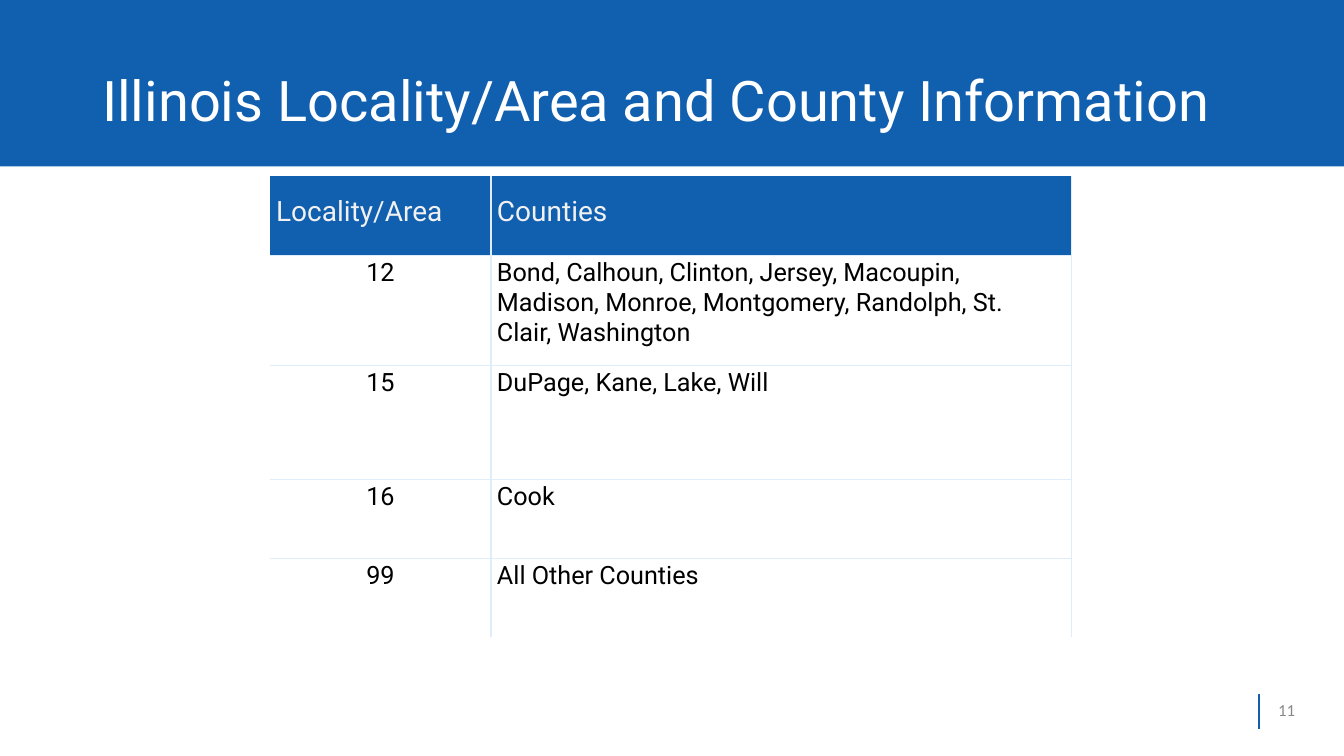
from lxml import etree
from pptx import Presentation
from pptx.dml.color import RGBColor
from pptx.enum.shapes import MSO_CONNECTOR, MSO_SHAPE
from pptx.enum.text import PP_ALIGN
from pptx.oxml.ns import qn
from pptx.util import Inches, Pt

SLIDE_W, SLIDE_H = Inches(13.33), Inches(7.5)
BLUE = RGBColor(0x11, 0x5F, 0xAF)
RULE_BLUE = RGBColor(0x12, 0x5F, 0xB0)
PALE_BLUE = RGBColor(0xDF, 0xEC, 0xF9)
WHITE = RGBColor(0xFF, 0xFF, 0xFF)
OFF_WHITE = RGBColor(0xF1, 0xF1, 0xF1)
BLACK = RGBColor(0, 0, 0)
GREY = RGBColor(0x88, 0x88, 0x88)

TITLE_FONT = {"name": "Roboto", "size": Pt(40)}
HEADER_FONT = {"name": "Roboto", "size": Pt(20)}
BODY_FONT = {"name": "Roboto", "size": Pt(18)}
PAGE_FONT = {"name": "Calibri", "size": Pt(12)}

COLUMN_SHARES = (16.43, 43.21)
ROW_SHARES = (10.5, 14.55, 15.08, 10.45, 10.45)
LOCALITIES = (
    ("Locality/Area", "Counties"),
    ("12", "Bond, Calhoun, Clinton, Jersey, Macoupin, Madison, Monroe, "
           "Montgomery, Randolph, St. Clair, Washington"),
    ("15", "DuPage, Kane, Lake, Will"),
    ("16", "Cook"),
    ("99", "All Other Counties"),
)


def across(percent):
    return round(SLIDE_W * percent / 100)


def down(percent):
    return round(SLIDE_H * percent / 100)


def apply(target, formats):
    for attribute, value in formats.items():
        setattr(target, attribute, value)


def write(frame, text, font, color, **paragraph_format):
    paragraph = frame.paragraphs[0]
    apply(paragraph, paragraph_format)
    run = paragraph.add_run()
    run.text = text
    apply(run.font, font)
    run.font.color.rgb = color


def add_label(slide, box, text, font, color, **paragraph_format):
    left, top, width, height = box
    frame = slide.shapes.add_textbox(
        across(left), down(top), across(width), down(height)).text_frame
    apply(frame, {"margin_left": 0, "margin_top": 0, "margin_right": 0,
                  "margin_bottom": 0, "word_wrap": True})
    write(frame, text, font, color, **paragraph_format)


def add_band(slide, height):
    band = slide.shapes.add_shape(
        MSO_SHAPE.RECTANGLE, 0, 0, SLIDE_W, down(height))
    band.shadow.inherit = False
    band.fill.solid()
    band.fill.fore_color.rgb = BLUE
    band.line.fill.background()


def add_rule(slide, x, top, bottom):
    rule = slide.shapes.add_connector(
        MSO_CONNECTOR.STRAIGHT, across(x), down(top), across(x), down(bottom))
    rule.line.color.rgb = RULE_BLUE
    rule.line.width = Pt(1.25)
    etree.SubElement(rule._element.spPr, qn("a:effectLst"))


def set_borders(cell, drawn_sides):
    """Draw the given sides (letters of L, R, T, B) and clear the others."""
    properties = cell._tc.get_or_add_tcPr()
    for position, side in enumerate("LRTB"):
        border = etree.Element(qn(f"a:ln{side}"), w=str(Pt(1)))
        if side in drawn_sides:
            fill = etree.SubElement(border, qn("a:solidFill"))
            etree.SubElement(fill, qn("a:srgbClr"), val=str(PALE_BLUE))
        else:
            etree.SubElement(border, qn("a:noFill"))
        properties.insert(position, border)


def fill_cell(cell, text, row, column):
    is_header = row == 0
    apply(cell, {"margin_left": across(0.45) if is_header or column else 0,
                 "margin_right": across(3) if column else 0,
                 "margin_top": down(2.5 if is_header else 0.4),
                 "margin_bottom": 0})
    if is_header:
        cell.fill.solid()
        cell.fill.fore_color.rgb = BLUE
        write(cell.text_frame, text, HEADER_FONT, OFF_WHITE)
    else:
        cell.fill.background()
        write(cell.text_frame, text, BODY_FONT, BLACK,
              alignment=PP_ALIGN.LEFT if column else PP_ALIGN.CENTER)
    is_last = row == len(LOCALITIES) - 1
    set_borders(cell, "R" + "L" * (column > 0) + "T" * (not is_header)
                + "B" * (not is_last))


def add_locality_table(slide, left, top):
    table = slide.shapes.add_table(
        len(ROW_SHARES), len(COLUMN_SHARES), across(left), down(top),
        across(sum(COLUMN_SHARES)), down(sum(ROW_SHARES))).table
    apply(table, {"first_row": False, "horz_banding": False})
    for column, share in zip(table.columns, COLUMN_SHARES):
        column.width = across(share)
    for row, share in zip(table.rows, ROW_SHARES):
        row.height = down(share)
    for row, entries in enumerate(LOCALITIES):
        for column, text in enumerate(entries):
            fill_cell(table.cell(row, column), text, row, column)


def main():
    deck = Presentation()
    apply(deck, {"slide_width": SLIDE_W, "slide_height": SLIDE_H})
    slide = deck.slides.add_slide(deck.slide_layouts[6])
    add_band(slide, 22)
    add_rule(slide, 93.7, 91.8, 96.4)
    add_label(slide, (7.6, 8.7, 88, 12),
              "Illinois Locality/Area and County Information",
              TITLE_FONT, WHITE)
    add_label(slide, (95.1, 92.93, 2.4, 2.5), "11", PAGE_FONT, GREY,
              line_spacing=Pt(12.4))
    add_locality_table(slide, 20.1, 23.3)
    deck.save("out.pptx")


if __name__ == "__main__":
    main()
